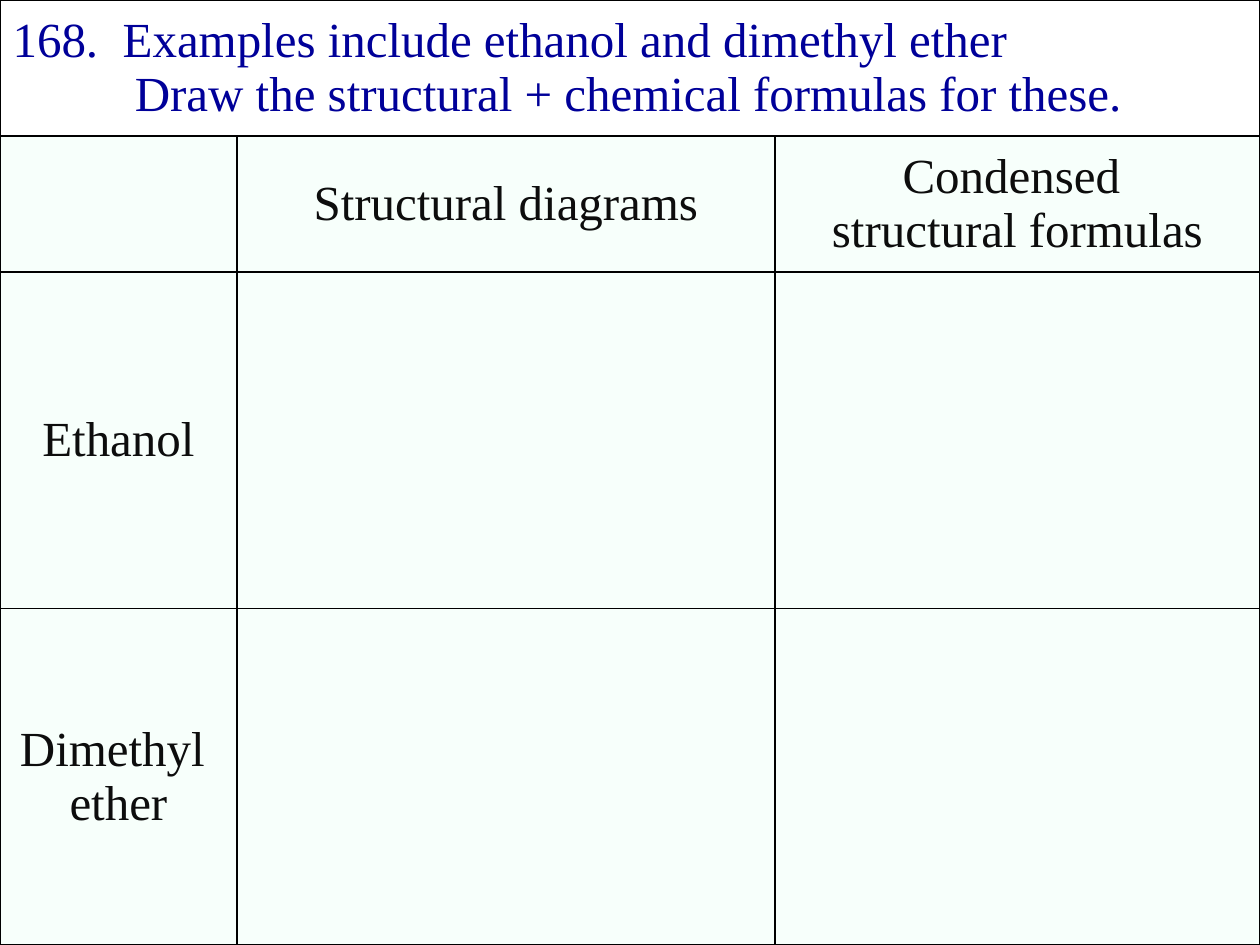
from lxml.etree import SubElement
from pptx import Presentation
from pptx.dml.color import RGBColor
from pptx.enum.text import MSO_ANCHOR, PP_ALIGN
from pptx.oxml.ns import qn
from pptx.util import Inches, Pt

COLORS = {
    "background": "F7FFFB",
    "title_fill": "FFFFFF",
    "title": "000099",
    "text": "0D0D0D",
    "border": "000000",
}
COLUMN_WIDTHS = [1.88, 4.27, 3.85]
ROW_HEIGHTS = [1.08, 1.08, 2.67, 2.67]
TITLE = (
    "168.  Examples include ethanol and dimethyl ether\v"
    "Draw the structural + chemical formulas for these."
)
LABELS = {
    (1, 1): "Structural diagrams",
    (1, 2): "Condensed \vstructural formulas",
    (2, 0): "Ethanol",
    (3, 0): "Dimethyl \vether",
}


def rgb(name):
    return RGBColor.from_string(COLORS[name])


class Worksheet:
    font_name = "Times New Roman"
    font_size = Pt(28)
    border_width = Pt(1)

    def __init__(self, deck):
        self.page = deck.slides.add_slide(deck.slide_layouts[6])
        fill = self.page.background.fill
        fill.solid()
        fill.fore_color.rgb = rgb("background")

    def grid(self, widths, heights):
        """Add a plain table with every cell outlined and unfilled."""
        table = self.page.shapes.add_table(
            len(heights), len(widths), 0, 0,
            Inches(sum(widths)), Inches(sum(heights)),
        ).table
        table.first_row = table.horz_banding = False
        for column, width in zip(table.columns, widths):
            column.width = Inches(width)
        for row, height in zip(table.rows, heights):
            row.height = Inches(height)
        for cell in table.iter_cells():
            self.outline(cell)
            cell.fill.background()
        return table

    def outline(self, cell):
        properties = cell._tc.get_or_add_tcPr()
        for side in ("lnL", "lnR", "lnT", "lnB"):
            line = SubElement(properties, qn(f"a:{side}"), w=str(self.border_width))
            fill = SubElement(line, qn("a:solidFill"))
            SubElement(fill, qn("a:srgbClr"), val=COLORS["border"])

    def label(self, cell, text, color="text", align=PP_ALIGN.CENTER):
        cell.vertical_anchor = MSO_ANCHOR.MIDDLE
        paragraph = cell.text_frame.paragraphs[0]
        paragraph.text = text
        paragraph.alignment = align
        paragraph.font.name = self.font_name
        paragraph.font.size = self.font_size
        paragraph.font.color.rgb = rgb(color)
        return paragraph

    def hang(self, paragraph, indent):
        """Indent every line of the paragraph after the first."""
        properties = paragraph._p.get_or_add_pPr()
        properties.set("marL", str(Inches(indent)))
        properties.set("indent", str(-Inches(indent)))


def main():
    deck = Presentation()
    deck.slide_width, deck.slide_height = Inches(10), Inches(7.5)
    sheet = Worksheet(deck)
    table = sheet.grid(COLUMN_WIDTHS, ROW_HEIGHTS)

    title_cell = table.cell(0, 0)
    title_cell.merge(table.cell(0, 2))
    title_cell.fill.solid()
    title_cell.fill.fore_color.rgb = rgb("title_fill")
    title = sheet.label(title_cell, TITLE, "title", PP_ALIGN.LEFT)
    sheet.hang(title, 0.97)

    for (row, column), text in LABELS.items():
        sheet.label(table.cell(row, column), text)

    deck.save("out.pptx")


if __name__ == "__main__":
    main()
